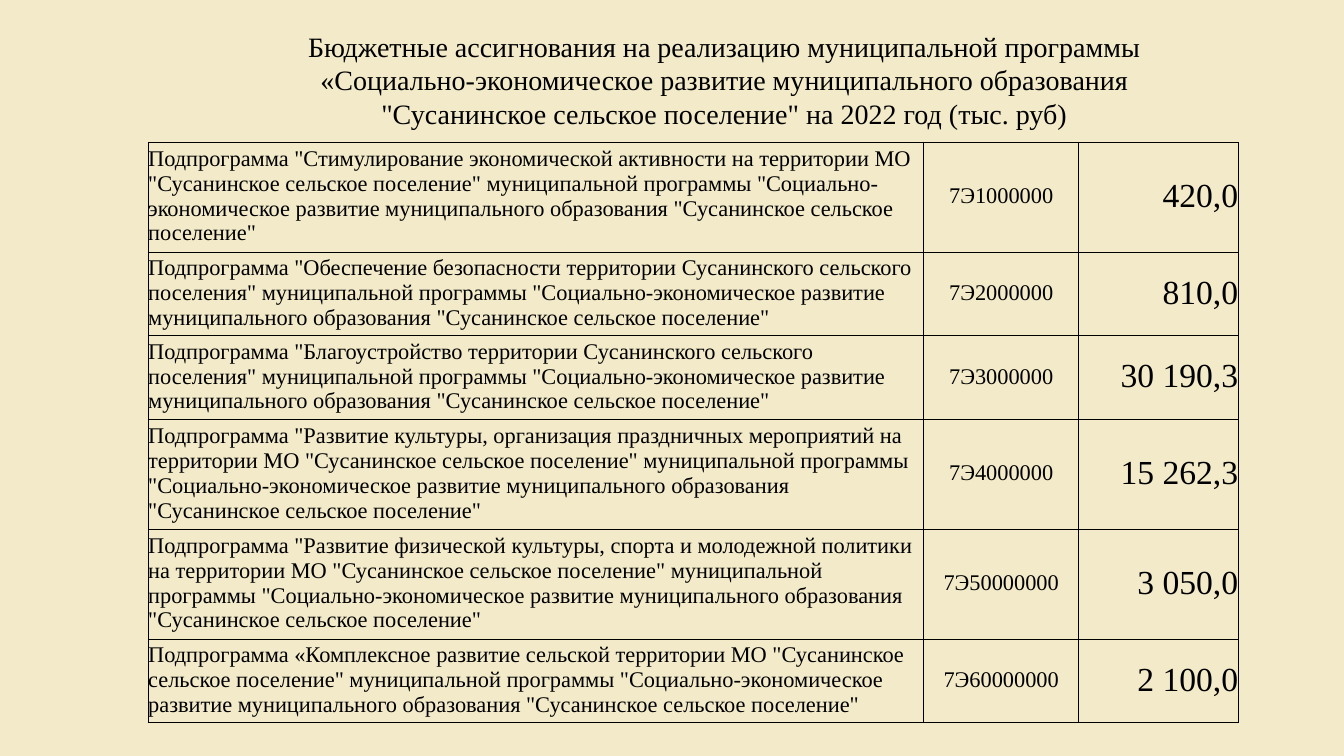
from dataclasses import dataclass

from lxml.etree import SubElement
from pptx import Presentation
from pptx.dml.color import RGBColor
from pptx.enum.text import MSO_ANCHOR as Anchor, PP_ALIGN as Align
from pptx.oxml.ns import qn
from pptx.slide import Slide
from pptx.table import _Cell as Cell
from pptx.util import Inches, Pt

PAPER = RGBColor(0xF2, 0xEA, 0xC8)
BLACK = RGBColor(0x00, 0x00, 0x00)
FONT = "Times New Roman"

PLACE = '"Сусанинское сельское поселение"'
PROGRAM = f"Социально-экономическое развитие муниципального образования {PLACE}"
TITLE = (
    "Бюджетные ассигнования на реализацию муниципальной программы "
    f"«{PROGRAM} на 2022 год (тыс. руб)"
)
TALL, SHORT = 1.09, 0.83  # rows of four and of three text lines


@dataclass
class Subprogram:
    name: str
    code: str
    amount: str
    height: float

    @property
    def full_name(self) -> str:
        return f'Подпрограмма {self.name} муниципальной программы "{PROGRAM}'


@dataclass
class Column:
    width: float
    size: int
    align: Align


SUBPROGRAMS = [
    Subprogram(f'"Стимулирование экономической активности на территории МО {PLACE}',
               "7Э1000000", "420,0", TALL),
    Subprogram('"Обеспечение безопасности территории Сусанинского сельского поселения"',
               "7Э2000000", "810,0", SHORT),
    Subprogram('"Благоустройство территории Сусанинского сельского поселения"',
               "7Э3000000", "30 190,3", SHORT),
    Subprogram('"Развитие культуры, организация праздничных мероприятий '
               f"на территории МО {PLACE}",
               "7Э4000000", "15 262,3", TALL),
    Subprogram('"Развитие физической культуры, спорта и молодежной политики '
               f"на территории МО {PLACE}",
               "7Э50000000", "3 050,0", TALL),
    Subprogram(f"«Комплексное развитие сельской территории МО {PLACE}",
               "7Э60000000", "2 100,0", SHORT),
]
COLUMNS = [
    Column(7.69, 16, Align.LEFT),
    Column(1.54, 16, Align.CENTER),
    Column(1.58, 24, Align.RIGHT),
]


def write(tf, text: str, size: int, align: Align) -> None:
    p = tf.paragraphs[0]
    p.text = text
    p.alignment = align
    p.font.name = FONT
    p.font.size = Pt(size)
    p.font.color.rgb = BLACK


def add_borders(cell: Cell) -> None:
    tc_pr = cell._tc.get_or_add_tcPr()
    for side in ("lnL", "lnR", "lnT", "lnB"):
        ln = SubElement(tc_pr, qn(f"a:{side}"), w=str(Pt(0.5)))
        fill = SubElement(ln, qn("a:solidFill"))
        SubElement(fill, qn("a:srgbClr"), val=str(BLACK))


def fill_cell(cell: Cell, text: str, column: Column) -> None:
    cell.margin_left = cell.margin_right = cell.margin_top = 0
    cell.margin_bottom = Inches(0.02)
    cell.vertical_anchor = Anchor.MIDDLE
    add_borders(cell)
    cell.fill.background()
    write(cell.text_frame, text, column.size, column.align)


def add_title(slide: Slide) -> None:
    sp = slide.shapes.add_textbox(Inches(2.47), Inches(0.24), Inches(9.43), Inches(1.11))
    sp.text_frame.word_wrap = True
    write(sp.text_frame, TITLE, 20, Align.CENTER)


def add_budget_table(slide: Slide) -> None:
    width = sum(column.width for column in COLUMNS)
    height = sum(item.height for item in SUBPROGRAMS)
    table = slide.shapes.add_table(
        len(SUBPROGRAMS), len(COLUMNS),
        Inches(1.47), Inches(1.41), Inches(width), Inches(height),
    ).table
    table.first_row = table.horz_banding = False
    for i, column in enumerate(COLUMNS):
        table.columns[i].width = Inches(column.width)
    for row, item in zip(table.rows, SUBPROGRAMS):
        row.height = Inches(item.height)
        texts = (item.full_name, item.code, item.amount)
        for cell, text, column in zip(row.cells, texts, COLUMNS):
            fill_cell(cell, text, column)


def main() -> None:
    prs = Presentation()
    prs.slide_width, prs.slide_height = Inches(13.33), Inches(7.5)
    slide = prs.slides.add_slide(prs.slide_layouts[6])

    # Background
    slide.background.fill.solid()
    slide.background.fill.fore_color.rgb = PAPER

    # Title and table
    add_title(slide)
    add_budget_table(slide)
    prs.save("out.pptx")


if __name__ == "__main__":
    main()
